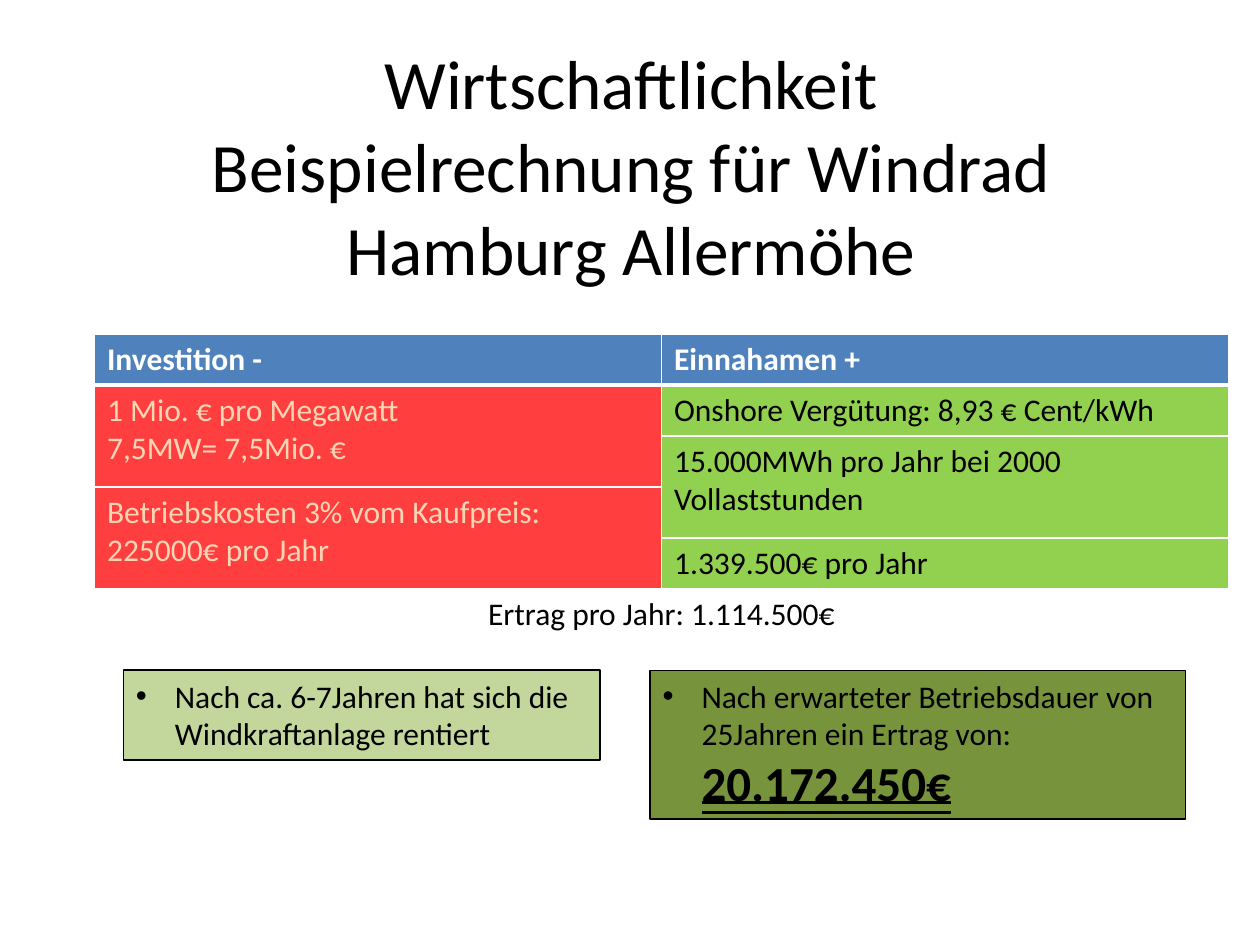
from lxml.etree import SubElement
from pptx import Presentation
from pptx.dml.color import RGBColor
from pptx.enum.shapes import MSO_SHAPE
from pptx.enum.text import MSO_ANCHOR, MSO_UNDERLINE, PP_ALIGN
from pptx.oxml.ns import qn
from pptx.util import Inches, Pt

COLORS = {
    "black": "000000",
    "white": "FFFFFF",
    "header": "4F81BD",
    "cost": "FF3F3F",
    "cost_text": "FCD5B5",
    "income": "92D050",
    "payback": "C3D69B",
    "profit": "77933C",
}
FONT = "Calibri"
ROW_HEIGHT = 2.43 / 6

# row, column, rows spanned, columns spanned, lines, fill, text colour, format
CELLS = [
    (0, 0, 1, 1, ["Investition -"], "header", "white", {"bold": True}),
    (0, 1, 1, 1, ["Einnahamen +"], "header", "white", {"bold": True}),
    (1, 0, 2, 1, ["1 Mio. € pro Megawatt", "7,5MW= 7,5Mio. €"], "cost", "cost_text", {}),
    (1, 1, 1, 1, ["Onshore Vergütung: 8,93 € Cent/kWh"], "income", "black", {}),
    (2, 1, 2, 1, ["15.000MWh pro Jahr bei 2000 Vollaststunden"], "income", "black", {}),
    (3, 0, 2, 1, ["Betriebskosten 3% vom Kaufpreis:", "225000€ pro Jahr"], "cost", "cost_text", {}),
    (4, 1, 1, 1, ["1.339.500€ pro Jahr"], "income", "black", {}),
    (5, 0, 1, 2, ["Ertrag pro Jahr: 1.114.500€"], "white", "black", {}),
]


def rgb(name):
    return RGBColor.from_string(COLORS[name])


def format_run(span, color="black", size=18, **values):
    values = {"name": FONT, "size": Pt(size), "bold": False, **values}
    for name, value in values.items():
        setattr(span.font, name, value)
    span.font.color.rgb = rgb(color)


def add_title(page, lines):
    box = page.shapes.add_textbox(Inches(0.51), Inches(0.68), Inches(9), Inches(1.25))
    frame = box.text_frame
    frame.word_wrap = True
    frame.vertical_anchor = MSO_ANCHOR.MIDDLE
    para = frame.paragraphs[0]
    para.alignment = PP_ALIGN.CENTER
    para.text = "\v".join(lines)
    for span in para.runs:
        format_run(span, size=39.6)


def set_borders(cell, top, bottom):
    """Draw white cell borders; top and bottom are widths in points."""
    properties = cell._tc.get_or_add_tcPr()
    for side, width in (("L", 1), ("R", 1), ("T", top), ("B", bottom)):
        line = SubElement(properties, qn(f"a:ln{side}"), w=str(Pt(width)))
        fill = SubElement(line, qn("a:solidFill"))
        SubElement(fill, qn("a:srgbClr"), val=COLORS["white"])


def add_table(page):
    table = page.shapes.add_table(
        6, 2, Inches(0.75), Inches(2.65), Inches(9), Inches(6 * ROW_HEIGHT)
    ).table
    for index, row in enumerate(table.rows):
        row.height = Inches(ROW_HEIGHT)
        for cell in row.cells:
            set_borders(cell, 3 if index == 1 else 1, 3 if index == 0 else 1)
    for row, column, height, width, lines, fill, color, values in CELLS:
        cell = table.cell(row, column)
        if height * width > 1:
            cell.merge(table.cell(row + height - 1, column + width - 1))
        cell.fill.solid()
        cell.fill.fore_color.rgb = rgb(fill)
        cell.text = "\n".join(lines)
        for para in cell.text_frame.paragraphs:
            if width > 1:
                para.alignment = PP_ALIGN.CENTER
            for span in para.runs:
                format_run(span, color, **values)


def add_bullet(para):
    properties = para._p.get_or_add_pPr()
    properties.set("marL", str(Inches(0.31)))
    properties.set("indent", str(Inches(-0.31)))
    SubElement(properties, qn("a:buFont"), typeface="Arial")
    SubElement(properties, qn("a:buChar"), char="•")


def add_result(page, left, width, height, fill, line_width, spans):
    """Add a bulleted result box; spans are pairs of text and format."""
    box = page.shapes.add_shape(
        MSO_SHAPE.RECTANGLE, Inches(left), Inches(5.32), Inches(width), Inches(height)
    )
    box.shadow.inherit = False
    box.fill.solid()
    box.fill.fore_color.rgb = rgb(fill)
    box.line.color.rgb = rgb("black")
    box.line.width = Pt(line_width)
    frame = box.text_frame
    frame.word_wrap = True
    frame.vertical_anchor = MSO_ANCHOR.TOP
    para = frame.paragraphs[0]
    para.alignment = PP_ALIGN.LEFT
    add_bullet(para)
    for text, values in spans:
        span = para.add_run()
        span.text = text
        format_run(span, **values)


def main():
    deck = Presentation()
    deck.slide_width, deck.slide_height = Inches(10), Inches(7.5)
    page = deck.slides.add_slide(deck.slide_layouts[6])
    add_title(page, ["Wirtschaftlichkeit", "Beispielrechnung für Windrad", "Hamburg Allermöhe"])
    add_table(page)
    add_result(page, 0.98, 3.78, 0.71, "payback", 1, [
        ("Nach ca. 6-7Jahren hat sich die Windkraftanlage rentiert", {}),
    ])
    add_result(page, 5.16, 4.25, 1.18, "profit", 0.75, [
        ("Nach erwarteter Betriebsdauer von 25Jahren ein Ertrag von: ", {}),
        ("20.172.450€", {"size": 28, "bold": True, "underline": MSO_UNDERLINE.DOUBLE_LINE}),
    ])
    deck.save("out.pptx")


if __name__ == "__main__":
    main()
